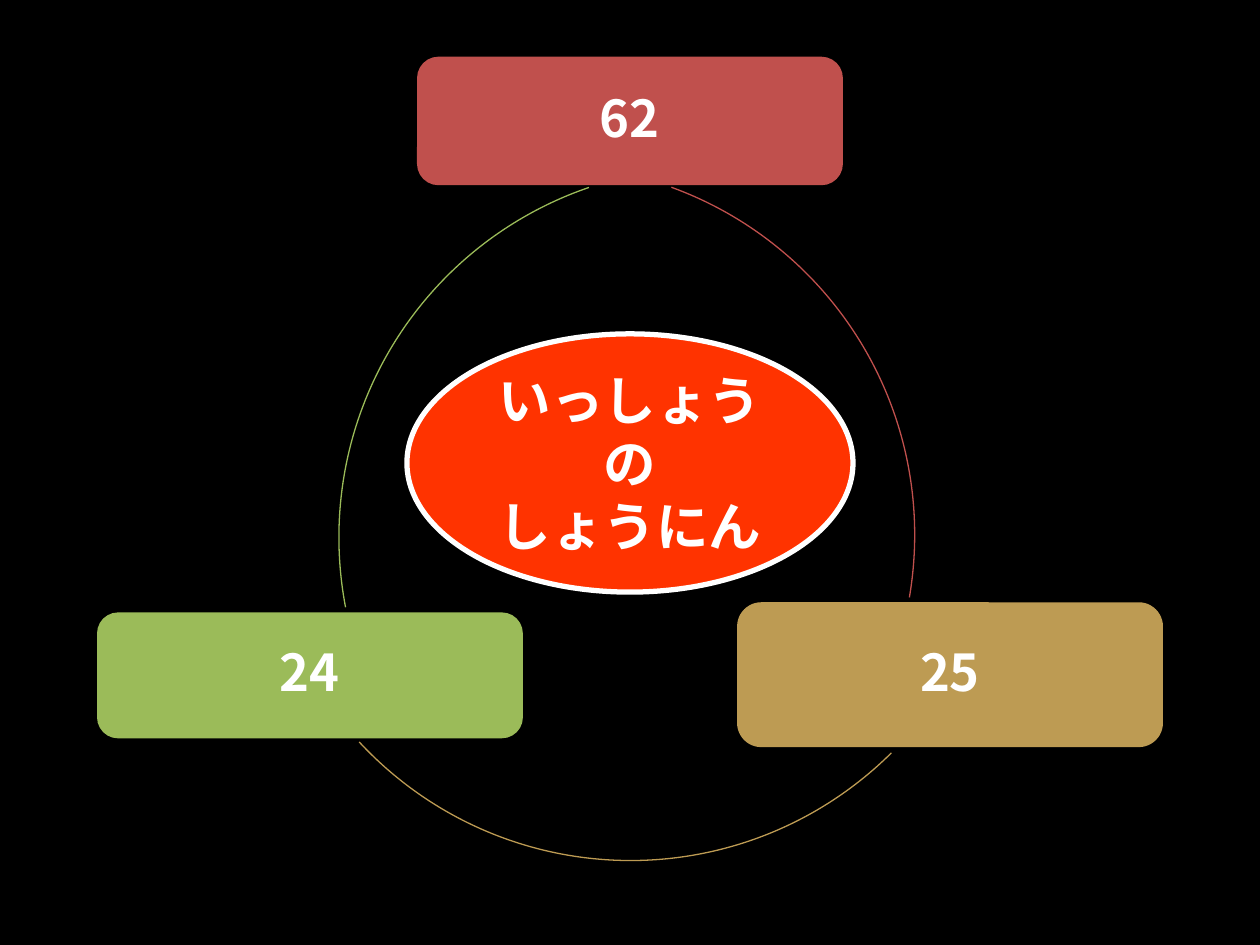
from dataclasses import dataclass

from pptx import Presentation
from pptx.dml.color import RGBColor
from pptx.enum.shapes import MSO_SHAPE as Preset
from pptx.enum.text import MSO_ANCHOR as Anchor, PP_ALIGN as Align
from pptx.util import Inches, Pt

SLIDE_WIDTH, SLIDE_HEIGHT = Inches(10), Inches(7.5)
CARD_WIDTH = 33.8  # percent of the slide width
RING_DIAMETER = 58.7  # percent of the slide width
WHITE = "FFFFFF"


@dataclass
class Station:
    """A card and the arc that leaves it; places in percent of the slide."""
    label: str
    color: str
    center_x: float
    center_y: float
    height: float
    arc_x: float
    arc_y: float
    arc_start: float  # degrees, clockwise from three o'clock
    arc_end: float


STATIONS = [
    Station("62", "C0504D", 50, 12.8, 13.6, 43.25, 56.6, 290, 9.75),
    Station("25", "BD9B53", 75.4, 71.4, 15.33, 50.05, 51.93, 45.15, 137.2),
    Station("24", "9BBB59", 24.6, 71.47, 13.33, 56.25, 56.87, 169.1, 251.1),
]


def across(percent: float) -> int:
    return int(SLIDE_WIDTH * percent / 100)


def down(percent: float) -> int:
    return int(SLIDE_HEIGHT * percent / 100)


def rgb(color: str) -> RGBColor:
    return RGBColor.from_string(color)


def add_centered(slide, preset, center_x: float, center_y: float, width: int, height: int):
    """Add a preset shape around its centre, without shadow."""
    shape = slide.shapes.add_shape(
        preset, across(center_x) - width // 2, down(center_y) - height // 2, width, height)
    shape.shadow.inherit = False
    return shape


def set_fill(shape, color: str) -> None:
    shape.fill.solid()
    shape.fill.fore_color.rgb = rgb(color)


def set_line(shape, color: str, points: float) -> None:
    shape.line.color.rgb = rgb(color)
    shape.line.width = Pt(points)


def set_text(shape, text: str, font: str, size: float, spacing: float = 1.0) -> None:
    frame = shape.text_frame
    frame.word_wrap = True
    frame.vertical_anchor = Anchor.MIDDLE
    frame.text = text
    for paragraph in frame.paragraphs:
        paragraph.alignment = Align.CENTER
        paragraph.line_spacing = spacing
        for run in paragraph.runs:
            run.font.name, run.font.size, run.font.bold = font, Pt(size), True
            run.font.color.rgb = rgb(WHITE)


def add_card(slide, station: Station) -> None:
    card = add_centered(slide, Preset.ROUNDED_RECTANGLE, station.center_x, station.center_y,
                        across(CARD_WIDTH), down(station.height))
    set_fill(card, station.color)
    card.line.fill.background()
    set_text(card, station.label, "Noto Sans CJK KR", 29, 0.9)


def add_arc(slide, station: Station) -> None:
    diameter = across(RING_DIAMETER)
    arc = add_centered(slide, Preset.ARC, station.arc_x, station.arc_y, diameter, diameter)
    # Angles are stored in 60000ths of a degree, adjustments in 100000ths
    for index, degrees in enumerate((station.arc_start, station.arc_end)):
        arc.adjustments[index] = degrees * 0.6
    arc.fill.background()
    set_line(arc, station.color, 0.75)


def add_hub(slide) -> None:
    hub = add_centered(slide, Preset.OVAL, 50, 49, across(35.4), down(27.33))
    set_fill(hub, "FF3300")
    set_line(hub, WHITE, 3)
    set_text(hub, "いっしょうの\nしょうにん", "Arial", 30)


def main() -> None:
    presentation = Presentation()
    presentation.slide_width, presentation.slide_height = SLIDE_WIDTH, SLIDE_HEIGHT
    slide = presentation.slides.add_slide(presentation.slide_layouts[6])
    set_fill(slide.background, "000000")

    # Ring of cards and arcs
    for station in STATIONS:
        add_card(slide, station)
        add_arc(slide, station)

    # Title in the middle
    add_hub(slide)
    presentation.save("out.pptx")


if __name__ == "__main__":
    main()
